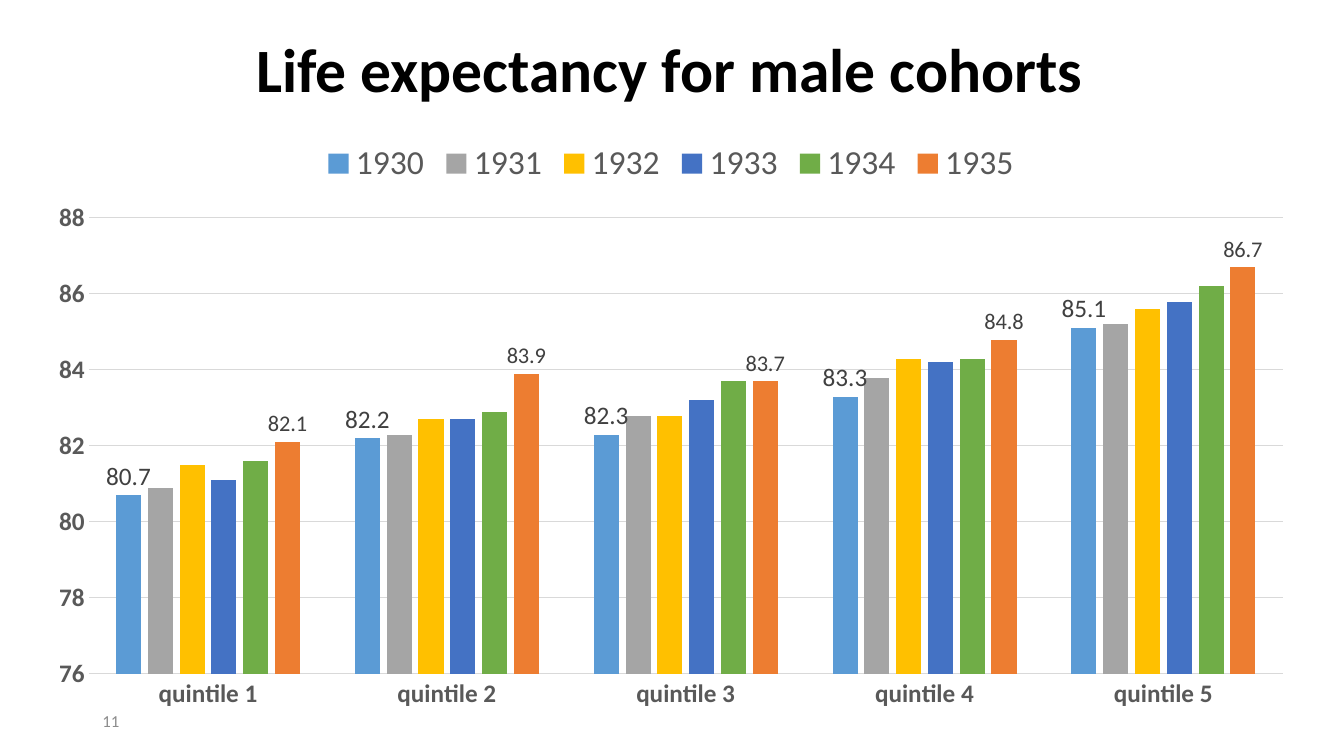
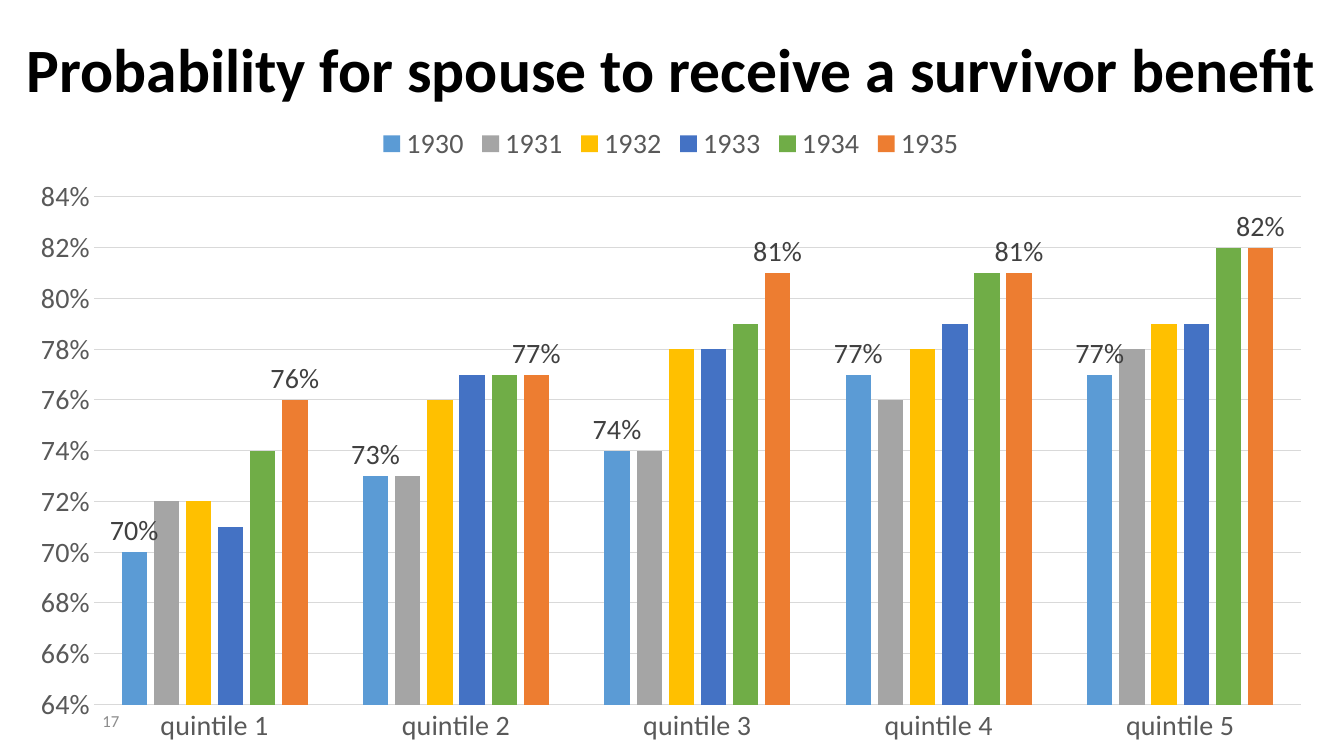
from pptx import Presentation
from pptx import util as u
from pptx.chart.data import CategoryChartData
from pptx.dml.color import RGBColor
from pptx.enum import chart as ch, text

FONT = "Calibri"
BLACK, GREY, LABEL, RULE, PAGE = "000000", "595959", "404040", "D9D9D9", "8C8C8C"
COHORTS = {"1930": "5B9BD5", "1931": "A5A5A5", "1932": "FFC000",
           "1933": "4472C4", "1934": "70AD47", "1935": "ED7D31"}
QUINTILES = [f"quintile {i}" for i in range(1, 6)]

LIFE_EXPECTANCY = [
    [80.7, 82.2, 82.3, 83.3, 85.1],
    [80.9, 82.3, 82.8, 83.8, 85.2],
    [81.5, 82.7, 82.8, 84.3, 85.6],
    [81.1, 82.7, 83.2, 84.2, 85.8],
    [81.6, 82.9, 83.7, 84.3, 86.2],
    [82.1, 83.9, 83.7, 84.8, 86.7],
]
SURVIVOR_BENEFIT = [
    [0.70, 0.73, 0.74, 0.77, 0.77],
    [0.72, 0.73, 0.74, 0.76, 0.78],
    [0.72, 0.76, 0.78, 0.78, 0.79],
    [0.71, 0.77, 0.78, 0.79, 0.79],
    [0.74, 0.77, 0.79, 0.81, 0.82],
    [0.76, 0.77, 0.81, 0.81, 0.82],
]


def px(n):
    return u.Emu(n * 9525)


def rgb(color):
    return RGBColor.from_string(color)


def set_font(font, size, color, bold=False):
    font.name, font.size, font.bold = FONT, u.Pt(size), bold
    font.color.rgb = rgb(color)


def set_line(line, color):
    line.color.rgb = rgb(color)
    line.width = u.Pt(0.75)


def add_title(s, box, words):
    sp = s.shapes.title
    sp.left, sp.top, sp.width, sp.height = map(px, box)
    tf = sp.text_frame
    tf.text = words
    tf.word_wrap = True
    tf.auto_size = text.MSO_AUTO_SIZE.NONE
    tf.vertical_anchor = text.MSO_ANCHOR.MIDDLE
    p = tf.paragraphs[0]
    p.alignment, p.line_spacing = text.PP_ALIGN.CENTER, 0.9
    set_font(p.font, 44, BLACK, True)


def add_page_number(s, box, number):
    tf = s.shapes.add_textbox(*map(px, box)).text_frame
    tf.text = str(number)
    tf.word_wrap = True
    tf.vertical_anchor = text.MSO_ANCHOR.MIDDLE
    p = tf.paragraphs[0]
    p.alignment = text.PP_ALIGN.LEFT
    set_font(p.font, 12, PAGE)


def style_axes(chart, scale, axis_format, size, bold):
    cat, val = chart.category_axis, chart.value_axis
    for axis in (cat, val):
        axis.major_tick_mark = axis.minor_tick_mark = ch.XL_TICK_MARK.NONE
        set_font(axis.tick_labels.font, size, GREY, bold)
    set_line(cat.format.line, RULE)
    val.format.line.fill.background()
    val.has_major_gridlines = True
    set_line(val.major_gridlines.format.line, RULE)
    val.minimum_scale, val.maximum_scale, val.major_unit = scale
    val.tick_labels.number_format = axis_format
    val.tick_labels.number_format_is_linked = False


def add_labels(series, size, number_format):
    labels = series.data_labels
    labels.show_value = True
    labels.position = ch.XL_LABEL_POSITION.OUTSIDE_END
    labels.number_format = number_format
    labels.number_format_is_linked = False
    set_font(labels.font, size, LABEL)


def add_cohort_chart(s, box, rows, scale, axis_format, label_format,
                     axis_size, legend_size, label_sizes, bold):
    """Clustered columns; only the first and last cohorts carry labels."""
    data = CategoryChartData()
    data.categories = QUINTILES
    for name, row in zip(COHORTS, rows):
        data.add_series(name, row)
    chart = s.shapes.add_chart(ch.XL_CHART_TYPE.COLUMN_CLUSTERED,
                               *map(px, box), data).chart
    set_font(chart.font, axis_size, BLACK)
    chart.has_title = False
    chart.has_legend = True
    chart.legend.position = ch.XL_LEGEND_POSITION.TOP
    chart.legend.include_in_layout = False
    set_font(chart.legend.font, legend_size, GREY)
    style_axes(chart, scale, axis_format, axis_size, bold)

    plot = chart.plots[0]
    plot.gap_width, plot.overlap, plot.vary_by_categories = 219, -27, False
    for series, color in zip(plot.series, COHORTS.values()):
        series.format.fill.solid()
        series.format.fill.fore_color.rgb = rgb(color)
        series.invert_if_negative = False
    for i, size in zip((0, -1), label_sizes):
        add_labels(list(plot.series)[i], size, label_format)


def add_chart_slide(prs, title, title_box, number, chart_box, **chart):
    s = prs.slides.add_slide(prs.slide_layouts[5])
    add_title(s, title_box, title)
    add_cohort_chart(s, chart_box, **chart)
    add_page_number(s, (88, 667, 288, 38), number)


def main():
    prs = Presentation()
    prs.slide_width, prs.slide_height = px(1280), px(720)
    add_chart_slide(
        prs, "Life expectancy for male cohorts", (86, 0, 1104, 139), 11,
        (32, 123, 1214, 563), rows=LIFE_EXPECTANCY, scale=(76, 88, 2),
        axis_format="#,##0", label_format="#,##0.0", axis_size=18,
        legend_size=24, label_sizes=(18, 16), bold=True)
    add_chart_slide(
        prs, "Probability for spouse to receive a survivor benefit",
        (0, 0, 1280, 139), 17,
        (14, 108, 1250, 612), rows=SURVIVOR_BENEFIT, scale=(0.64, 0.84, 0.02),
        axis_format="0%", label_format="0%", axis_size=20,
        legend_size=20, label_sizes=(20, 20), bold=False)
    prs.save("out.pptx")


if __name__ == "__main__":
    main()
